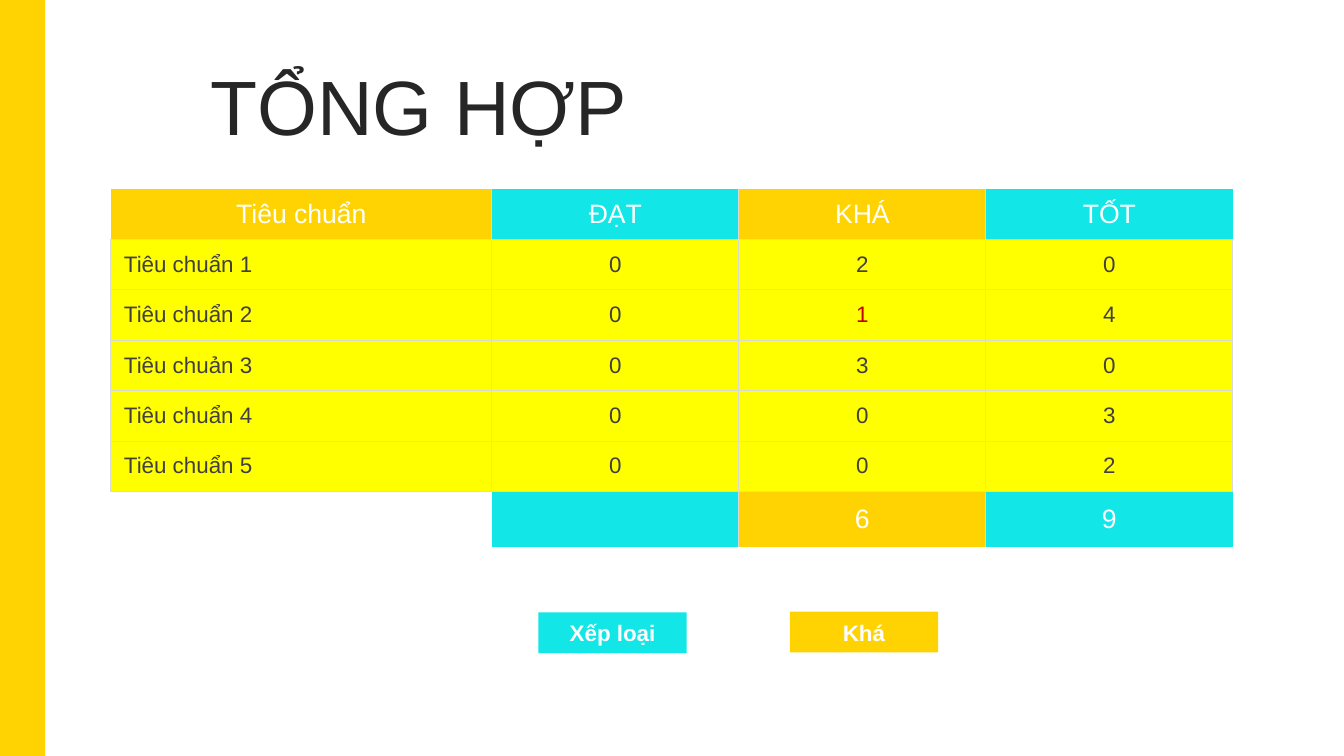
from dataclasses import dataclass
from typing import Optional

from lxml.etree import SubElement as Sub
from pptx import Presentation
from pptx.dml.color import RGBColor as Rgb
from pptx.enum.shapes import MSO_SHAPE as Shape
from pptx.enum.text import MSO_ANCHOR as Anchor, PP_ALIGN as Align
from pptx.oxml.ns import qn
from pptx.util import Emu, Inches, Pt

WIDE, HIGH = Inches(13.333), Inches(7.5)


@dataclass(frozen=True)
class Theme:
    font: str = "Arial"
    gold: str = "FFD302"
    cyan: str = "12E6E6"
    yellow: str = "FFFF00"
    white: str = "FFFFFF"
    title: str = "262626"
    body: str = "404040"
    alert: str = "C00000"
    edge: str = "D9D9D9"
    big: int = 55
    head: int = 19
    text: int = 16
    line: float = 0.75


@dataclass(frozen=True)
class Box:
    """A rectangle in hundredths of the slide's width and height."""
    left: float
    top: float
    width: float
    height: float

    def place(self) -> tuple[Emu, Emu, Emu, Emu]:
        return across(self.left), down(self.top), across(self.width), down(self.height)


@dataclass(frozen=True)
class Block:
    box: Box
    fill: str
    label: str = ""


LOOK = Theme()
TITLE = Box(14.93, 9.33, 81.98, 10.53)
GRID = Box(8.25, 25, 83.49, 47.42)
COLS = [28.35] + [18.38] * 3
ROWS = [6.67] * 6 + [7.4]
FILLS = [LOOK.gold, LOOK.cyan, LOOK.gold, LOOK.cyan]
CELLS = [
    ["Tiêu chuẩn", "ĐẠT", "KHÁ", "TỐT"],
    ["Tiêu chuẩn 1", "0", "2", "0"],
    ["Tiêu chuẩn 2", "0", "1", "4"],
    ["Tiêu chuản 3", "0", "3", "0"],
    ["Tiêu chuẩn 4", "0", "0", "3"],
    ["Tiêu chuẩn 5", "0", "0", "2"],
    ["", "", "6", "9"],
]
ALERT = (2, 2)
BLOCKS = [
    Block(Box(0, 0, 3.36, 100), LOOK.gold),
    Block(Box(40.07, 81, 11.02, 5.4), LOOK.cyan, "Xếp loại"),
    Block(Box(58.78, 80.9, 11.02, 5.4), LOOK.gold, "Khá"),
]


def across(share: float) -> Emu:
    return Emu(round(WIDE * share / 100))


def down(share: float) -> Emu:
    return Emu(round(HIGH * share / 100))


def write(para, text: str, size: int, color: str, bold: bool = False) -> None:
    run = para.add_run()
    run.text = text
    run.font.name = LOOK.font
    run.font.size = Pt(size)
    run.font.bold = bold
    run.font.color.rgb = Rgb.from_string(color)


def pad(item) -> None:
    """Set the inner margins shared by cells and labels."""
    item.margin_left = item.margin_right = Inches(0.13)
    item.margin_top = item.margin_bottom = Inches(0.07)


def paint(item, color: Optional[str]) -> None:
    if color is None:
        item.fill.background()
    else:
        item.fill.solid()
        item.fill.fore_color.rgb = Rgb.from_string(color)


def edge(cell, sides: str) -> None:
    """Draw the named sides (L, R, T, B) and clear the others."""
    props = cell._tc.get_or_add_tcPr()
    for side in "LRTB":
        line = Sub(props, qn(f"a:ln{side}"), w=str(Pt(LOOK.line)))
        if side in sides:
            fill = Sub(line, qn("a:solidFill"))
            Sub(fill, qn("a:srgbClr"), val=LOOK.edge)
        else:
            Sub(line, qn("a:noFill"))


def sides(row: int, col: int) -> str:
    """The header and total rows have no outer edges."""
    last = len(ROWS) - 1
    if 0 < row < last:
        return "LRTB"
    first = 1 if row == last else 0
    left = "L" if col > first else ""
    right = "R" if first <= col < len(COLS) - 1 else ""
    return left + right + ("T" if row else "B")


def add_title(slide) -> None:
    frame = slide.shapes.add_textbox(*TITLE.place()).text_frame
    frame.word_wrap = True
    frame.vertical_anchor = Anchor.MIDDLE
    para = frame.paragraphs[0]
    para.line_spacing = 0.9
    write(para, "TỔNG HỢP", LOOK.big, LOOK.title)


def add_grid(slide) -> None:
    table = slide.shapes.add_table(len(ROWS), len(COLS), *GRID.place()).table
    table.first_row = table.horz_banding = False
    for col, share in zip(table.columns, COLS):
        col.width = across(share)
    for row, share in zip(table.rows, ROWS):
        row.height = down(share)
    for r, texts in enumerate(CELLS):
        strong = r in (0, len(ROWS) - 1)
        for c, text in enumerate(texts):
            cell = table.cell(r, c)
            pad(cell)
            cell.vertical_anchor = Anchor.MIDDLE
            edge(cell, sides(r, c))
            blank = r > 0 and c == 0 and strong
            paint(cell, None if blank else FILLS[c] if strong else LOOK.yellow)
            para = cell.text_frame.paragraphs[0]
            para.alignment = Align.CENTER if c or strong else Align.LEFT
            color = LOOK.white if strong else LOOK.alert if (r, c) == ALERT else LOOK.body
            if text:
                write(para, text, LOOK.head if strong else LOOK.text, color)


def add_block(slide, block: Block) -> None:
    shape = slide.shapes.add_shape(Shape.RECTANGLE, *block.box.place())
    shape.shadow.inherit = False
    shape.line.fill.background()
    paint(shape, block.fill)
    if block.label:
        frame = shape.text_frame
        pad(frame)
        frame.word_wrap = True
        frame.vertical_anchor = Anchor.TOP
        para = frame.paragraphs[0]
        para.alignment = Align.CENTER
        write(para, block.label, LOOK.text, LOOK.white, True)


def main() -> None:
    deck = Presentation()
    deck.slide_width, deck.slide_height = WIDE, HIGH
    slide = deck.slides.add_slide(deck.slide_layouts[6])
    bar, *chips = BLOCKS
    add_block(slide, bar)
    add_title(slide)
    add_grid(slide)
    for chip in chips:
        add_block(slide, chip)
    deck.save("out.pptx")


if __name__ == "__main__":
    main()
